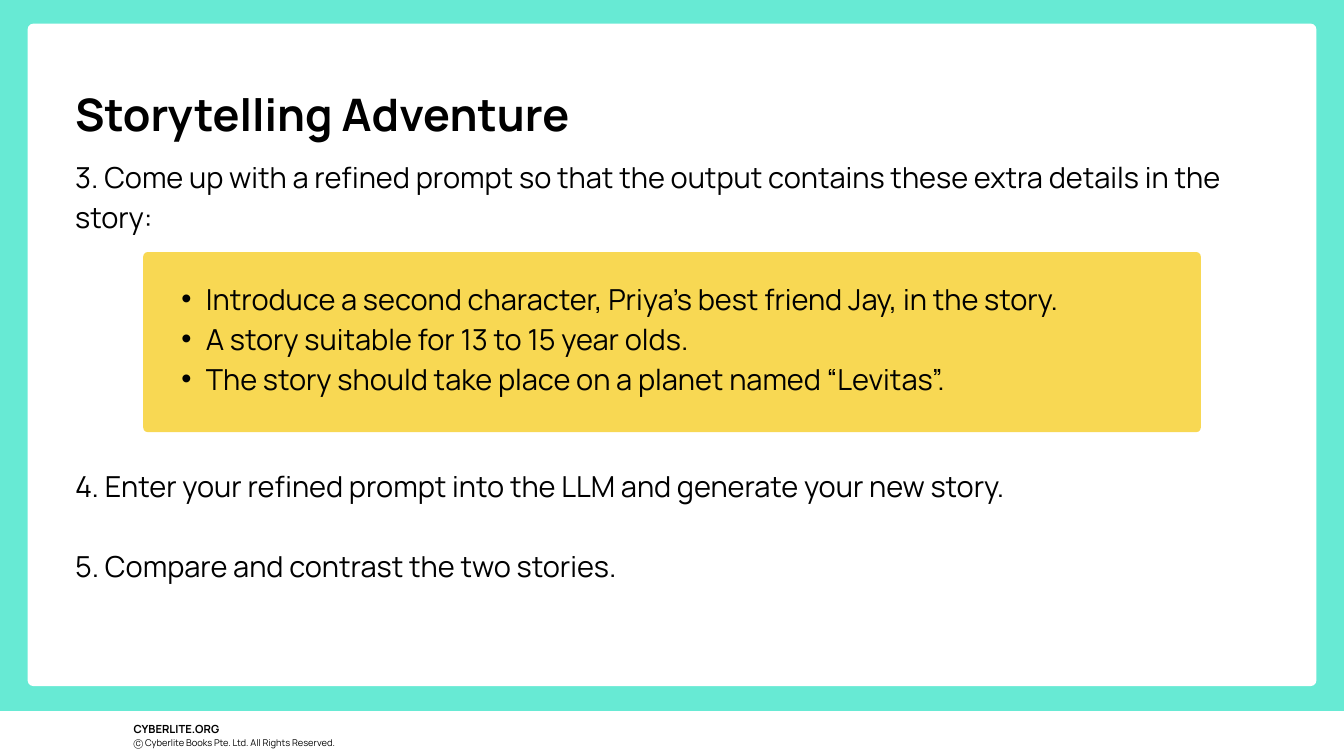
import pptx
import pptx.dml.color
import pptx.enum.shapes
import pptx.enum.text
import pptx.oxml.ns
import pptx.util
from dataclasses import dataclass
from lxml import etree

Pt = pptx.util.Pt
MSO_SHAPE = pptx.enum.shapes.MSO_SHAPE


@dataclass(frozen=True)
class Theme:
    font: str = "Manrope"
    mint: str = "67EAD4"
    white: str = "FFFFFF"
    yellow: str = "F8D853"
    black: str = "000000"
    title: float = 48
    body: float = 31
    site: float = 12
    legal: float = 10


theme = Theme()
rgb = pptx.dml.color.RGBColor.from_string

prs = pptx.Presentation()
prs.slide_width, prs.slide_height = Pt(1440), Pt(810)
s = prs.slides.add_slide(prs.slide_layouts[6])
s.background.fill.solid()
s.background.fill.fore_color.rgb = rgb(theme.mint)


def add_panel(left, top, width, height, color, radius=0):
    kind = MSO_SHAPE.ROUNDED_RECTANGLE if radius else MSO_SHAPE.RECTANGLE
    sp = s.shapes.add_shape(kind, Pt(left), Pt(top), Pt(width), Pt(height))
    if radius:
        sp.adjustments[0] = radius / min(width, height)
    sp.shadow.inherit = False
    sp.fill.solid()
    sp.fill.fore_color.rgb = rgb(color)
    sp.line.fill.background()


def add_text(left, top, width, height, lines, size, spacing, bold=False,
             bullets=False, gap=0):
    """Add one paragraph per line; gap is the space between paragraphs."""
    sp = s.shapes.add_textbox(Pt(left), Pt(top), Pt(width), Pt(height))
    tf = sp.text_frame
    tf.word_wrap = True
    tf.auto_size = pptx.enum.text.MSO_AUTO_SIZE.SHAPE_TO_FIT_TEXT
    tf.margin_left = tf.margin_top = tf.margin_right = tf.margin_bottom = 0
    for i, line in enumerate(lines):
        p = tf.add_paragraph() if i else tf.paragraphs[0]
        if bullets:
            p.level = 1
            pPr = p._p.get_or_add_pPr()
            pPr.set("marL", str(Pt(52.8)))
            pPr.set("indent", str(Pt(-26.4)))
            buClr = etree.SubElement(pPr, pptx.oxml.ns.qn("a:buClr"))
            etree.SubElement(buClr, pptx.oxml.ns.qn("a:srgbClr"), val=theme.black)
            etree.SubElement(pPr, pptx.oxml.ns.qn("a:buFont"), typeface="Arial")
            etree.SubElement(pPr, pptx.oxml.ns.qn("a:buChar"), char="•")
        p.line_spacing = spacing
        if i and gap:
            p.space_before = Pt(gap)
        r = p.add_run()
        r.text = line
        r.font.name = theme.font
        r.font.size = Pt(size)
        r.font.bold = bold
        r.font.color.rgb = rgb(theme.black)


# Footer
add_panel(0, 762, 1440, 48, theme.white)
add_text(143.3, 768.2, 103, 14.4, ["CYBERLITE.ORG"], theme.site, 1.4, bold=True)
add_text(143.3, 784.8, 333.4, 12.2,
         ["Ⓒ Cyberlite Books Pte. Ltd. All Rights Reserved."], theme.legal, 1.4)

# Content card and prompt box
add_panel(29.5, 25.2, 1381, 710, theme.white, radius=6.5)
add_panel(153.4, 270, 1133.2, 193, theme.yellow, radius=5)

# Title and steps
add_text(80.6, 69.8, 694, 68.4, ["Storytelling Adventure"], theme.title, 1.4, bold=True)
add_text(80.6, 165.6, 1278, 80.6,
         ["3. Come up with a refined prompt so that the output contains "
          "these extra details in the story:"], theme.body, 1.15)
add_text(167.8, 295.9, 1104.5, 123.8,
         ["Introduce a second character, Priya’s best friend Jay, in the story.",
          "A story suitable for 13 to 15 year olds.",
          "The story should take place on a planet named “Levitas”."],
         theme.body, 1.15, bullets=True)
add_text(80.6, 496.8, 1278, 123.8,
         ["4. Enter your refined prompt into the LLM and generate your new story.",
          "5. Compare and contrast the two stories."], theme.body, 1.15, gap=42.5)

prs.save("out.pptx")
